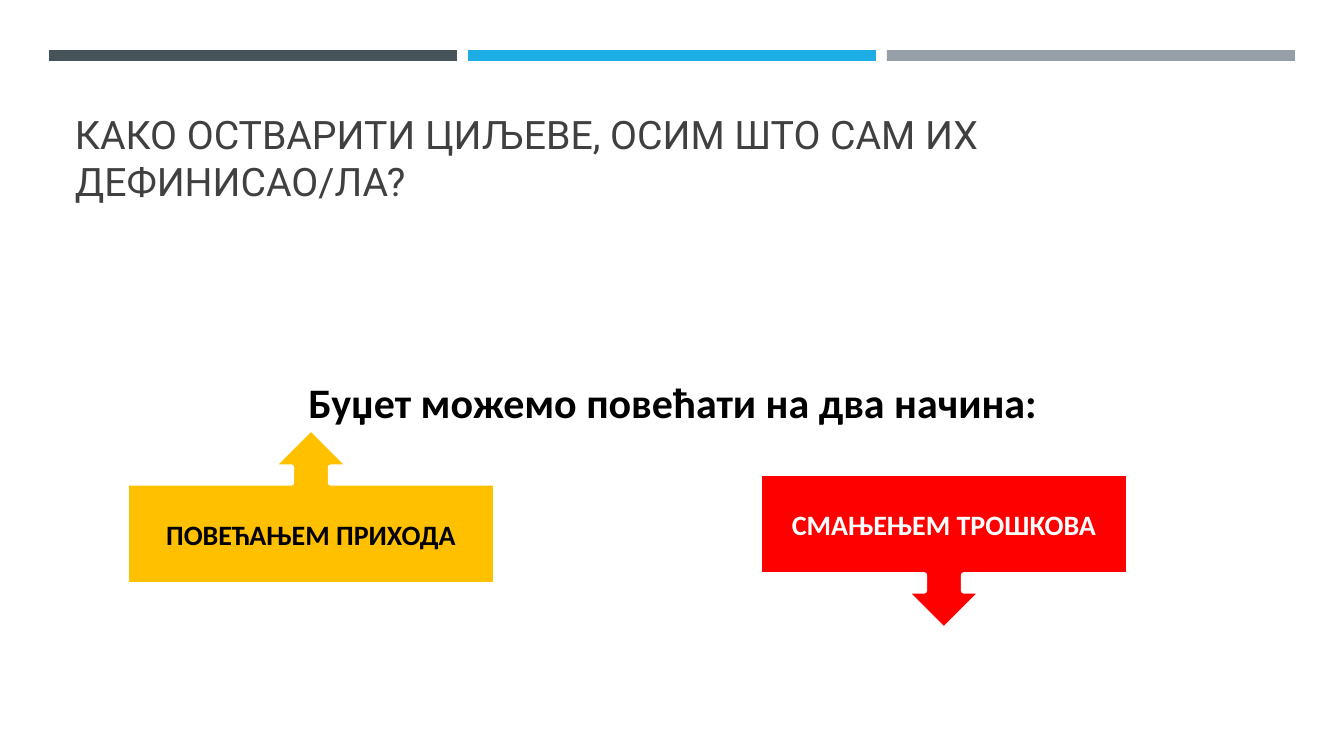
"""Build a slide on two ways to increase a budget."""
from pptx import Presentation
from pptx import util as u
from pptx.dml.color import RGBColor
from pptx.enum import shapes, text

PX = 9071.43
SLIDE = (1344, 756)
COLOURS = {
    "slate": "465359", "blue": "1CADE4", "grey": "969FA7", "title": "404040",
    "amber": "FFC000", "red": "FF0000", "black": "000000", "white": "FFFFFF",
}
TITLE = "КАКО ОСТВАРИТИ ЦИЉЕВЕ, ОСИМ ШТО САМ ИХ ДЕФИНИСАО/ЛА?"
STATEMENT = "Буџет можемо повећати на два начина:"
BARS = ["slate", "blue", "grey"]
BAR_LEFT, BAR_TOP, BAR_WIDTH, BAR_HEIGHT, BAR_STEP = 49, 50, 408, 11, 419
TITLE_BOX = (65, 78, 1216, 131)
STATEMENT_BOX = (65, 258, 1216, 400)
STATEMENT_INSET = 119
CALLOUT_SIZE = (370, 157)
CALLOUT_PROPORTIONS = (0.25, 0.25, 0.25, 0.65)
CALLOUTS = [
    ("ПОВЕЋАЊЕМ ПРИХОДА", shapes.MSO_SHAPE.UP_ARROW_CALLOUT, (126, 428), "amber", "black"),
    ("СМАЊЕЊЕМ ТРОШКОВА", shapes.MSO_SHAPE.DOWN_ARROW_CALLOUT, (759, 473), "red", "white"),
]


def px(length):
    return u.Emu(round(length * PX))


def colour(name):
    return RGBColor.from_string(COLOURS[name])


def write(shape, words, *, size, ink, font="Calibri", bold=True, centred=True,
          anchor=text.MSO_ANCHOR.MIDDLE, top_inset=5):
    frame = shape.text_frame
    frame.word_wrap = True
    frame.vertical_anchor = anchor
    frame.margin_top = px(top_inset)
    paragraph = frame.paragraphs[0]
    paragraph.alignment = text.PP_ALIGN.CENTER if centred else text.PP_ALIGN.LEFT
    run = paragraph.add_run()
    run.text = words
    run.font.name = font
    run.font.size = u.Pt(size)
    run.font.bold = bold
    run.font.color.rgb = colour(ink)


def add_box(slide, box):
    return slide.shapes.add_textbox(*map(px, box))


def add_filled(slide, kind, box, fill):
    shape = slide.shapes.add_shape(kind, *map(px, box))
    shape.shadow.inherit = False
    shape.fill.solid()
    shape.fill.fore_color.rgb = colour(fill)
    shape.line.fill.background()
    return shape


def main():
    presentation = Presentation()
    presentation.slide_width, presentation.slide_height = map(px, SLIDE)
    slide = presentation.slides.add_slide(presentation.slide_layouts[6])

    for index, fill in enumerate(BARS):
        box = (BAR_LEFT + index * BAR_STEP, BAR_TOP, BAR_WIDTH, BAR_HEIGHT)
        add_filled(slide, shapes.MSO_SHAPE.RECTANGLE, box, fill)

    write(add_box(slide, TITLE_BOX), TITLE, size=28, ink="title", font="Roboto",
          bold=False, centred=False, anchor=text.MSO_ANCHOR.BOTTOM)
    write(add_box(slide, STATEMENT_BOX), STATEMENT, size=30, ink="black",
          anchor=text.MSO_ANCHOR.TOP, top_inset=STATEMENT_INSET)

    for words, kind, position, fill, ink in CALLOUTS:
        callout = add_filled(slide, kind, position + CALLOUT_SIZE, fill)
        for index, proportion in enumerate(CALLOUT_PROPORTIONS):
            callout.adjustments[index] = proportion
        callout.line.color.rgb = colour("white")
        callout.line.width = u.Pt(4)
        write(callout, words, size=20, ink=ink)

    presentation.save("out.pptx")


if __name__ == "__main__":
    main()
